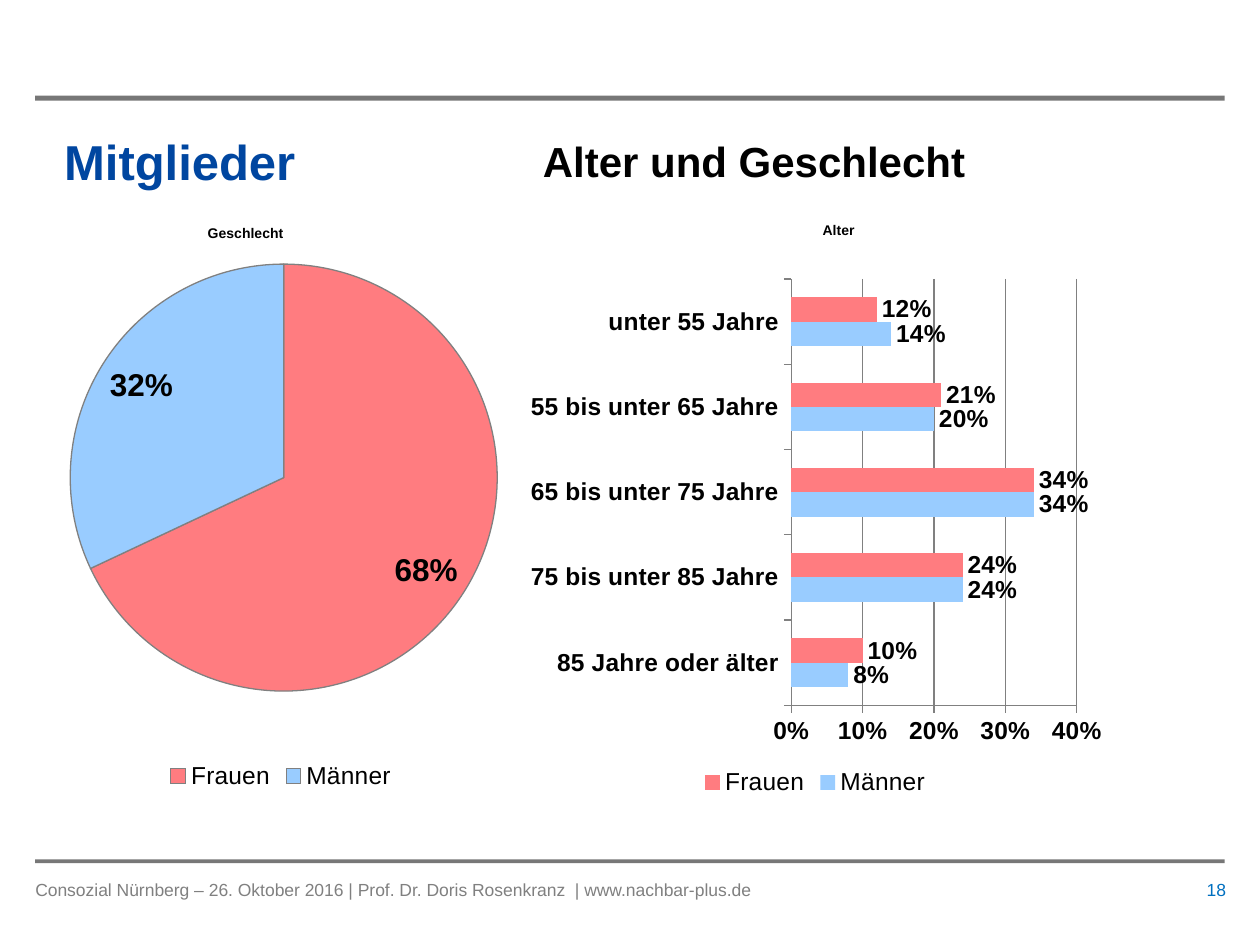
from lxml.etree import SubElement
from pptx import Presentation
from pptx.chart.data import CategoryChartData as ChartData
from pptx.dml.color import RGBColor
from pptx.enum.chart import XL_CHART_TYPE as ChartType
from pptx.enum.chart import XL_LABEL_POSITION as LabelPlace
from pptx.enum.chart import XL_LEGEND_POSITION as LegendPlace
from pptx.enum.chart import XL_TICK_MARK as Tick
from pptx.enum.shapes import MSO_SHAPE as Preset
from pptx.enum.text import MSO_ANCHOR as Anchor
from pptx.enum.text import PP_ALIGN as Align
from pptx.oxml.ns import qn
from pptx.util import Inches, Pt

WIDTH, HEIGHT = 10, 7.5
MARGIN = 0.28
FONT = "Arial"
BLACK, GREY, RULE_GREY = "000000", "808080", "777777"
WOMEN, MEN = "FF7C80", "99CCFF"
AGES = ["85 Jahre oder älter", "75 bis unter 85 Jahre", "65 bis unter 75 Jahre",
        "55 bis unter 65 Jahre", "unter 55 Jahre"]
AGE_SERIES = {
    "Männer": (MEN, [0.08, 0.24, 0.34, 0.2, 0.14]),
    "Frauen": (WOMEN, [0.1, 0.24, 0.34, 0.21, 0.12]),
}


def color(code):
    """Turn a hex string into a colour."""
    return RGBColor.from_string(code)


def set_all(target, **values):
    """Set several attributes of one object."""
    for name, value in values.items():
        setattr(target, name, value)


def style_font(font, size, code=BLACK, bold=False):
    """Give a font the deck's face with a size, colour and weight."""
    set_all(font, name=FONT, size=Pt(size), bold=bold)
    font.color.rgb = color(code)


def paint(target, code):
    """Fill a shape, point or series with one colour."""
    target.fill.solid()
    target.fill.fore_color.rgb = color(code)


def write(box, text, size, code=BLACK, bold=False, align=Align.LEFT,
          anchor=Anchor.TOP, inset=(0, 0)):
    """Write one styled paragraph into a text shape."""
    side, top = map(Inches, inset)
    set_all(box.text_frame, word_wrap=True, vertical_anchor=anchor,
            margin_left=side, margin_right=side,
            margin_top=top, margin_bottom=top)
    para = box.text_frame.paragraphs[0]
    para.alignment = align
    span = para.add_run()
    span.text = text
    style_font(span.font, size, code, bold)


def add_label(page, area, text, size, **style):
    """Add a text box at an area in inches."""
    write(page.shapes.add_textbox(*map(Inches, area)), text, size, **style)


def add_title(page, text):
    """Move and format the title placeholder."""
    title = page.shapes.title
    area = map(Inches, (0.51, 0.84, 9, 0.87))
    set_all(title, **dict(zip(("left", "top", "width", "height"), area)))
    write(title, text, 28, "0046A0", True, anchor=Anchor.MIDDLE)


def add_rule(page, top, thickness):
    """Add a grey bar between the side margins."""
    area = (MARGIN, top, WIDTH - 2 * MARGIN, thickness)
    rule = page.shapes.add_shape(Preset.RECTANGLE, *map(Inches, area))
    rule.shadow.inherit = False
    paint(rule, RULE_GREY)
    rule.line.fill.background()


def place_plot(chart, shares):
    """Fix the inner plot area as shares of the chart's size."""
    plot_area = chart.element.chart.plotArea
    for old in plot_area.findall(qn("c:layout")):
        plot_area.remove(old)
    layout = SubElement(plot_area, qn("c:layout"))
    plot_area.insert(0, layout)
    manual = SubElement(layout, qn("c:manualLayout"))
    settings = [("layoutTarget", "inner"), ("xMode", "edge"), ("yMode", "edge")]
    for name, value in settings + list(zip("xywh", shares)):
        SubElement(manual, qn(f"c:{name}")).set("val", str(value))


def add_percent_chart(page, kind, area, categories, series, shares,
                      label_size, label_place):
    """Add a chart of shares with a bottom legend and value labels."""
    data = ChartData(number_format="0%")
    data.categories = categories
    for name, values in series.items():
        data.add_series(name, values)
    chart = page.shapes.add_chart(kind, *map(Inches, area), data).chart
    set_all(chart, has_title=False, has_legend=True)
    style_font(chart.font, 18)
    set_all(chart.legend, position=LegendPlace.BOTTOM, include_in_layout=False)
    style_font(chart.legend.font, 14)
    place_plot(chart, shares)
    plot = chart.plots[0]
    plot.has_data_labels = True
    set_all(plot.data_labels, show_value=True, show_percentage=False,
            number_format="0%", number_format_is_linked=False,
            position=label_place)
    style_font(plot.data_labels.font, label_size, bold=True)
    return chart


def add_gender_pie(page):
    """Add the pie of women and men."""
    chart = add_percent_chart(
        page, ChartType.PIE, (0, 1.73, 4.46, 4.58), ["Frauen", "Männer"],
        {"Geschlecht": [0.68, 0.32]}, (0.1, 0.08, 0.81, 0.74),
        18, LabelPlace.INSIDE_END)
    chart.plots[0].vary_by_categories = True
    for index, code in enumerate((WOMEN, MEN)):
        wedge = chart.plots[0].series[0].points[index].format
        paint(wedge, code)
        wedge.line.color.rgb = color(GREY)
        wedge.line.width = Pt(0.75)


def add_age_bars(page):
    """Add the bars of age groups by gender."""
    chart = add_percent_chart(
        page, ChartType.BAR_CLUSTERED, (4.11, 2.13, 4.72, 4.23), AGES,
        {name: values for name, (_, values) in AGE_SERIES.items()},
        (0.46, 0.02, 0.48, 0.8), 14, LabelPlace.OUTSIDE_END)
    set_all(chart.plots[0], gap_width=150, overlap=0, vary_by_categories=False)
    for series, (code, _) in zip(chart.plots[0].series, AGE_SERIES.values()):
        paint(series.format, code)
    for axis in (chart.category_axis, chart.value_axis):
        set_all(axis, major_tick_mark=Tick.OUTSIDE, minor_tick_mark=Tick.NONE)
        style_font(axis.tick_labels.font, 14, bold=True)
        axis.format.line.color.rgb = color(GREY)
    axis = chart.value_axis
    set_all(axis, minimum_scale=0, maximum_scale=0.4, major_unit=0.1,
            has_major_gridlines=True)
    axis.major_gridlines.format.line.color.rgb = color(GREY)
    set_all(axis.tick_labels, number_format="0%", number_format_is_linked=False)


def main():
    """Build and save the slide."""
    deck = Presentation()
    set_all(deck, slide_width=Inches(WIDTH), slide_height=Inches(HEIGHT))
    page = deck.slides.add_slide(deck.slide_layouts[5])
    add_rule(page, 6.82, 0.03)
    add_rule(page, 0.76, 0.04)
    add_title(page, "Mitglieder")
    heading = {"bold": True, "inset": (0.1, 0.05)}
    add_label(page, (4.21, 1.03, 5.47, 0.5), "Alter und Geschlecht", 24, **heading)
    add_label(page, (1.55, 1.73, 2.21, 0.4), "Geschlecht", 8, **heading)
    add_gender_pie(page)
    add_label(page, (6.43, 1.71, 1.28, 0.4), "Alter", 8, **heading)
    add_age_bars(page)
    add_label(page, (MARGIN, 6.98, 7.85, 0.39),
              "Consozial Nürnberg – 26. Oktober 2016 | Prof. Dr. Doris Rosenkranz  "
              "| www.nachbar-plus.de", 10, code=GREY)
    add_label(page, (8.94, 6.98, 0.79, 0.2), "18", 10, code="0070C0",
              align=Align.RIGHT)
    deck.save("out.pptx")


if __name__ == "__main__":
    main()
